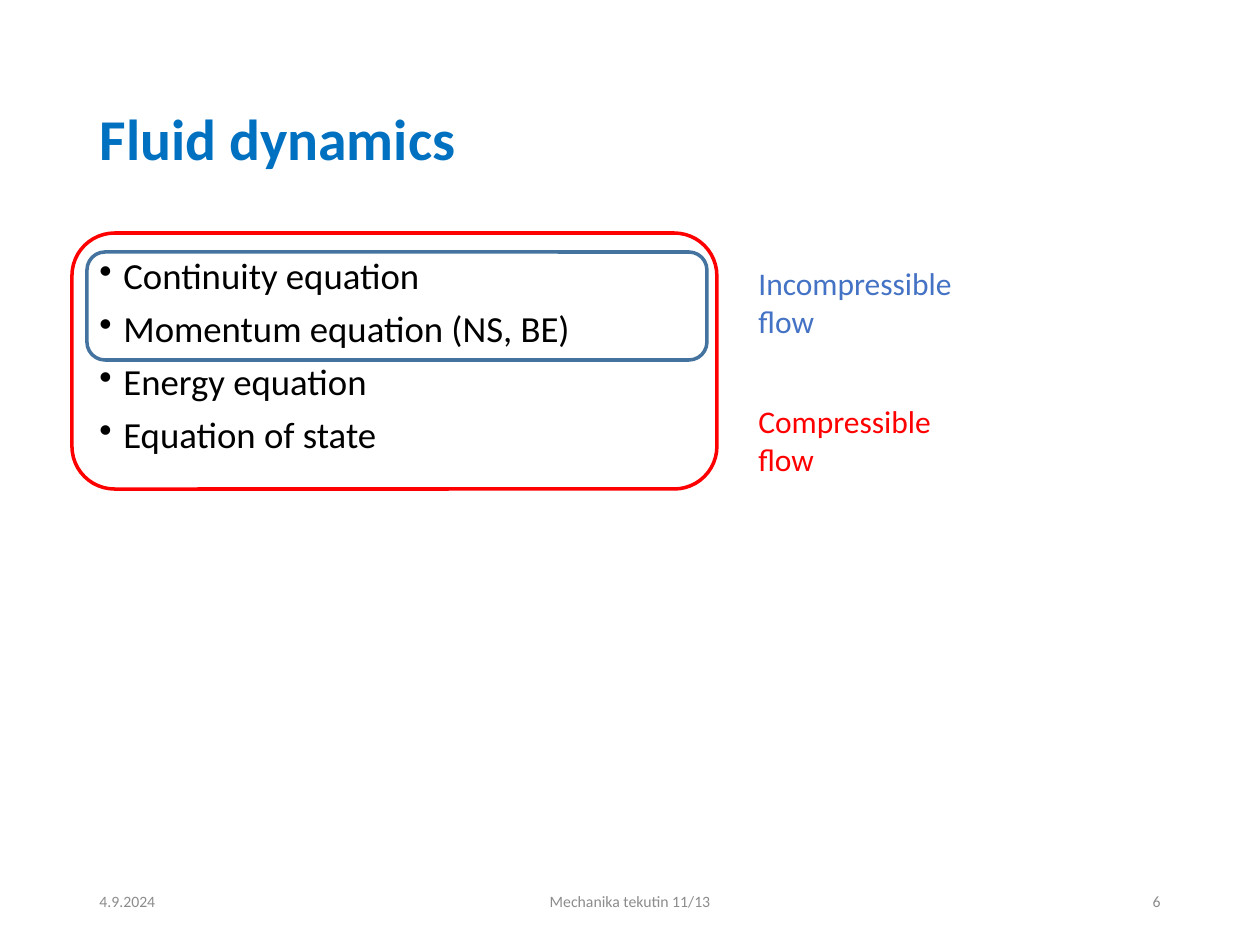
import pptx
import pptx.util
import pptx.dml.color
import pptx.enum.shapes
import pptx.enum.text
import lxml.etree
from dataclasses import dataclass

SCALE = 914400 / 126  # EMU in one px
ALIGN = pptx.enum.text.PP_ALIGN
ANCHOR = pptx.enum.text.MSO_ANCHOR


@dataclass(frozen=True)
class Theme:
    font: str = "Calibri"
    title: str = "0070C0"
    body: str = "000000"
    foot: str = "8C8C8C"
    blue: str = "4472C4"
    frame: str = "43739E"
    red: str = "FF0000"
    head_size: int = 33
    body_size: int = 21
    label_size: int = 18
    foot_size: int = 9
    line: int = 2


THEME = Theme()


def px(num):
    return pptx.util.Emu(round(num * SCALE))


def rgb(code):
    return pptx.dml.color.RGBColor.from_string(code)


def style(para, size, color, bold=False, align=ALIGN.LEFT):
    para.alignment = align
    font = para.font
    font.name, font.size, font.bold = THEME.font, pptx.util.Pt(size), bold
    font.color.rgb = rgb(color)


def add_title(slide, text, box):
    title = slide.shapes.title
    title.left, title.top, title.width, title.height = map(px, box)
    frame = title.text_frame
    frame.text = text
    frame.vertical_anchor = ANCHOR.MIDDLE
    frame.auto_size = pptx.enum.text.MSO_AUTO_SIZE.NONE
    para = frame.paragraphs[0]
    para.line_spacing = 0.9
    style(para, THEME.head_size, THEME.title, bold=True)


def add_text(slide, text, box, size, color, align=ALIGN.LEFT, anchor=ANCHOR.TOP):
    frame = slide.shapes.add_textbox(*map(px, box)).text_frame
    frame.word_wrap = True
    frame.vertical_anchor = anchor
    frame.text = text
    for para in frame.paragraphs:
        style(para, size, color, align=align)
    return frame


def add_list(slide, items, box):
    frame = add_text(slide, "\n".join(items), box, THEME.body_size, THEME.body)
    for i, para in enumerate(frame.paragraphs):
        para.line_spacing = 0.9
        para.space_before = pptx.util.Pt(7.5 if i else 0)
        add_bullet(para, 24)


def add_bullet(para, indent):
    props = para._p.get_or_add_pPr()
    props.set("marL", str(px(indent)))
    props.set("indent", str(-px(indent)))
    mark = lxml.etree.Element(pptx.oxml.ns.qn("a:buChar"), char="•")
    # The bullet comes before the run defaults and after the spacing
    props.find(pptx.oxml.ns.qn("a:defRPr")).addprevious(mark)


def add_frame(slide, box, color):
    kind = pptx.enum.shapes.MSO_SHAPE.ROUNDED_RECTANGLE
    shape = slide.shapes.add_shape(kind, *map(px, box))
    shape.shadow.inherit = False
    shape.fill.background()
    shape.line.color.rgb = rgb(color)
    shape.line.width = pptx.util.Pt(THEME.line)


def main():
    deck = pptx.Presentation()
    deck.slide_width, deck.slide_height = px(1260), px(945)
    slide = deck.slides.add_slide(deck.slide_layouts[5])

    # Title and list of equations
    add_title(slide, "Fluid dynamics", (87, 50, 1086, 183))
    add_list(slide, ["Continuity equation", "Momentum equation (NS, BE)",
                     "Energy equation", "Equation of state"],
             (87, 252, 1086, 600))

    # Footer
    for text, left, width, align in (
            ("4.9.2024", 87, 284, ALIGN.LEFT),
            ("Mechanika tekutin 11/13", 417, 426, ALIGN.CENTER),
            ("6", 889, 284, ALIGN.RIGHT)):
        add_text(slide, text, (left, 876, width, 50), THEME.foot_size,
                 THEME.foot, align, ANCHOR.MIDDLE)

    # Flow labels
    add_text(slide, "Incompressible\nflow", (746, 258, 220, 89),
             THEME.label_size, THEME.blue)
    add_text(slide, "Compressible flow", (746, 396, 202, 89),
             THEME.label_size, THEME.red)

    # Frames around the equations of each flow
    add_frame(slide, (87, 252, 620, 108), THEME.frame)
    add_frame(slide, (72, 233, 645, 256), THEME.red)

    deck.save("out.pptx")


if __name__ == "__main__":
    main()
